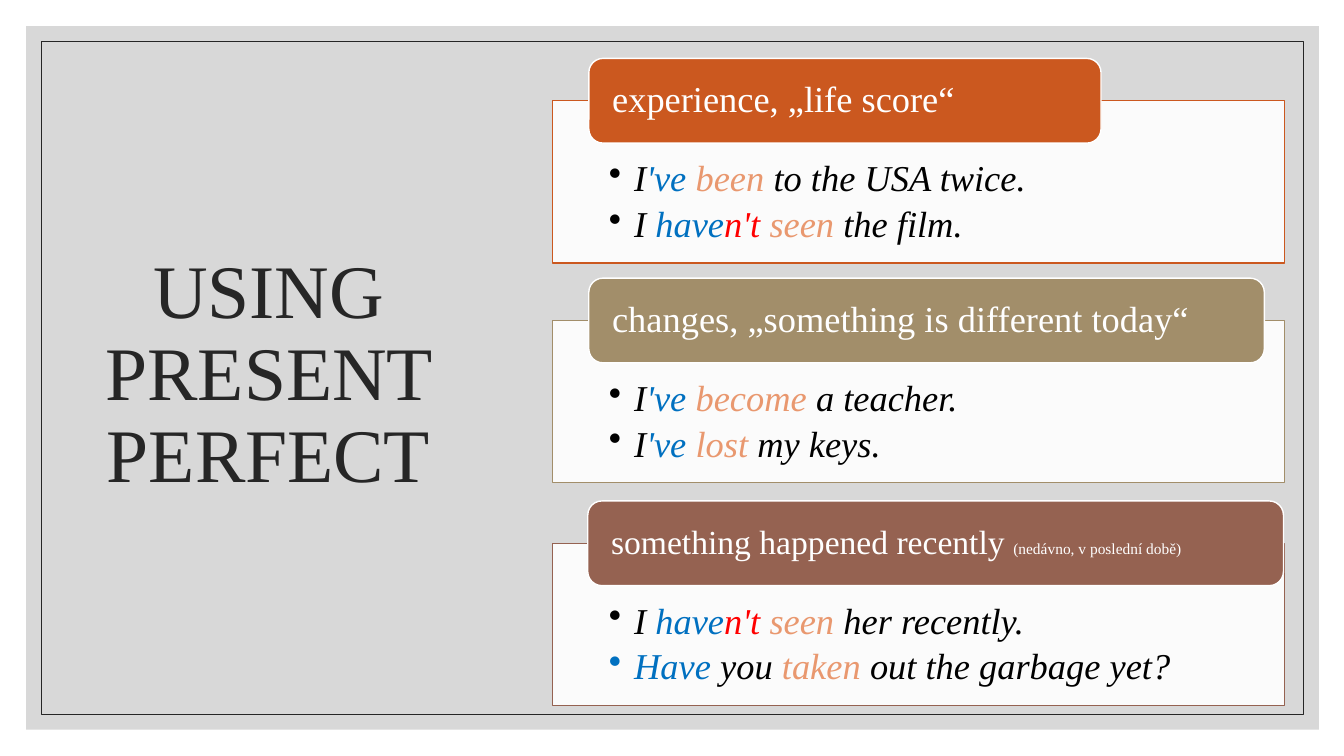
import pptx
import pptx.util
import pptx.dml.color
import pptx.enum.shapes
import pptx.enum.text
import pptx.oxml.ns
import lxml.etree

Inches = pptx.util.Inches
Pt = pptx.util.Pt
Shapes = pptx.enum.shapes.MSO_SHAPE
Anchor = pptx.enum.text.MSO_ANCHOR
Align = pptx.enum.text.PP_ALIGN

FONT = "Times New Roman"
COLORS = {
    "panel": "BFBFBF", "dark": "262626", "white": "FFFFFF", "black": "000000",
    "auxiliary": "0070C0", "negative": "FF0000", "participle": "E9986F",
    "orange": "CB581F", "tan": "A28E6A", "brown": "956251",
}
USES = [
    {"color": "orange", "left": 0.36, "width": 5.08, "top": 1.0,
     "heading": [("experience, „life score“", 26)],
     "examples": [
         [("I", "black"), ("'ve ", "auxiliary"), ("been", "participle"),
          (" to the USA twice.", "black")],
         [("I ", "black"), ("have", "auxiliary"), ("n't ", "negative"),
          ("seen", "participle"), (" the film.", "black")]]},
    {"color": "tan", "left": 0.36, "width": 6.7, "top": 3.18,
     "heading": [("changes, „something is different today“", 26)],
     "examples": [
         [("I", "black"), ("'ve ", "auxiliary"), ("become", "participle"),
          (" a teacher.", "black")],
         [("I", "black"), ("'ve ", "auxiliary"), ("lost", "participle"),
          (" my keys.", "black")]]},
    {"color": "brown", "left": 0.35, "width": 6.9, "top": 5.39,
     "heading": [("something happened recently ", 24), ("(nedávno, v poslední době)", 11)],
     "examples": [
         [("I ", "black"), ("have", "auxiliary"), ("n't ", "negative"),
          ("seen", "participle"), (" her recently.", "black")],
         [("Have ", "auxiliary"), ("you ", "black"), ("taken", "participle"),
          (" out the garbage yet?", "black")]]},
]


def rgb(name):
    """Return the named colour."""
    return pptx.dml.color.RGBColor.from_string(COLORS[name])


def add_box(slide, kind, box, fill=None, line=None, line_width=1, opacity=100):
    """Add a preset shape without shadow at box (left, top, width, height)."""
    shape = slide.shapes.add_shape(kind, *map(Inches, box))
    shape.shadow.inherit = False
    if fill:
        shape.fill.solid()
        shape.fill.fore_color.rgb = rgb(fill)
        if opacity < 100:
            color = shape.fill._xPr.find(".//" + pptx.oxml.ns.qn("a:srgbClr"))
            alpha = lxml.etree.SubElement(color, pptx.oxml.ns.qn("a:alpha"))
            alpha.set("val", str(opacity * 1000))
    else:
        shape.fill.background()
    if line:
        shape.line.color.rgb = rgb(line)
        shape.line.width = Pt(line_width)
    else:
        shape.line.fill.background()
    return shape


def set_frame(shape, anchor, insets):
    """Wrap the text of a shape and set its anchor and insets."""
    frame = shape.text_frame
    frame.word_wrap = True
    frame.vertical_anchor = anchor
    frame.margin_left, frame.margin_top, frame.margin_right, frame.margin_bottom = map(Inches, insets)
    return frame


def add_run(paragraph, text, size=26, color="black", italic=False):
    """Append formatted text to a paragraph."""
    run = paragraph.add_run()
    run.text = text
    run.font.name = FONT
    run.font.size = Pt(size)
    run.font.italic = italic
    run.font.color.rgb = rgb(color)


def format_paragraph(paragraph, align=Align.LEFT, space_after=0, bullet=False):
    """Set the alignment, spacing and optional bullet of a paragraph."""
    paragraph.alignment = align
    paragraph.line_spacing = 0.9
    paragraph.space_after = Pt(space_after)
    if bullet:
        properties = paragraph._p.get_or_add_pPr()
        properties.set("marL", str(Inches(0.25)))
        properties.set("indent", str(-Inches(0.25)))
        mark = lxml.etree.SubElement(properties, pptx.oxml.ns.qn("a:buChar"))
        mark.set("char", "•")


def add_backdrop(slide, box):
    """Draw the grey panel and the thin frame inside it."""
    left, top, width, height = box
    add_box(slide, Shapes.RECTANGLE, box, fill="panel", opacity=60)
    inner = (left + 0.15, top + 0.15, width - 0.3, height - 0.3)
    add_box(slide, Shapes.RECTANGLE, inner, line="dark", line_width=0.5)


def add_title(slide, box):
    """Write the slide title centred in its box."""
    shape = slide.shapes.add_textbox(*map(Inches, box))
    frame = set_frame(shape, Anchor.MIDDLE, (0.1, 0.05, 0.1, 0.05))
    paragraph = frame.paragraphs[0]
    format_paragraph(paragraph, align=Align.CENTER)
    add_run(paragraph, "USING PRESENT PERFECT", size=54, color="dark")


def add_use(slide, box, use):
    """Draw one use of the tense: a box of examples under a heading tab."""
    left, top, width, height = box
    body = add_box(slide, Shapes.RECTANGLE, box, fill="white", line=use["color"], opacity=90)
    frame = set_frame(body, Anchor.TOP, (0.56, 0.59, 0.56, 0.2))
    for index, example in enumerate(use["examples"]):
        paragraph = frame.add_paragraph() if index else frame.paragraphs[0]
        format_paragraph(paragraph, space_after=4.6, bullet=True)
        for text, color in example:
            add_run(paragraph, text, color=color, italic=True)

    tab_box = (left + use["left"], top - 0.42, use["width"], 0.84)
    tab = add_box(slide, Shapes.ROUNDED_RECTANGLE, tab_box, fill=use["color"], line="white")
    paragraph = set_frame(tab, Anchor.MIDDLE, (0.19, 0, 0.19, 0)).paragraphs[0]
    format_paragraph(paragraph)
    for text, size in use["heading"]:
        add_run(paragraph, text, size=size, color="white")


def main():
    """Build and save the slide."""
    presentation = pptx.Presentation()
    presentation.slide_width = Inches(13.33)
    presentation.slide_height = Inches(7.5)
    slide = presentation.slides.add_slide(presentation.slide_layouts[6])
    add_backdrop(slide, (0.26, 0.26, 12.82, 6.98))
    add_title(slide, (0.41, 0.61, 4.51, 6.24))
    for use in USES:
        add_use(slide, (5.48, use["top"], 7.26, 1.61), use)
    presentation.save("out.pptx")


if __name__ == "__main__":
    main()
